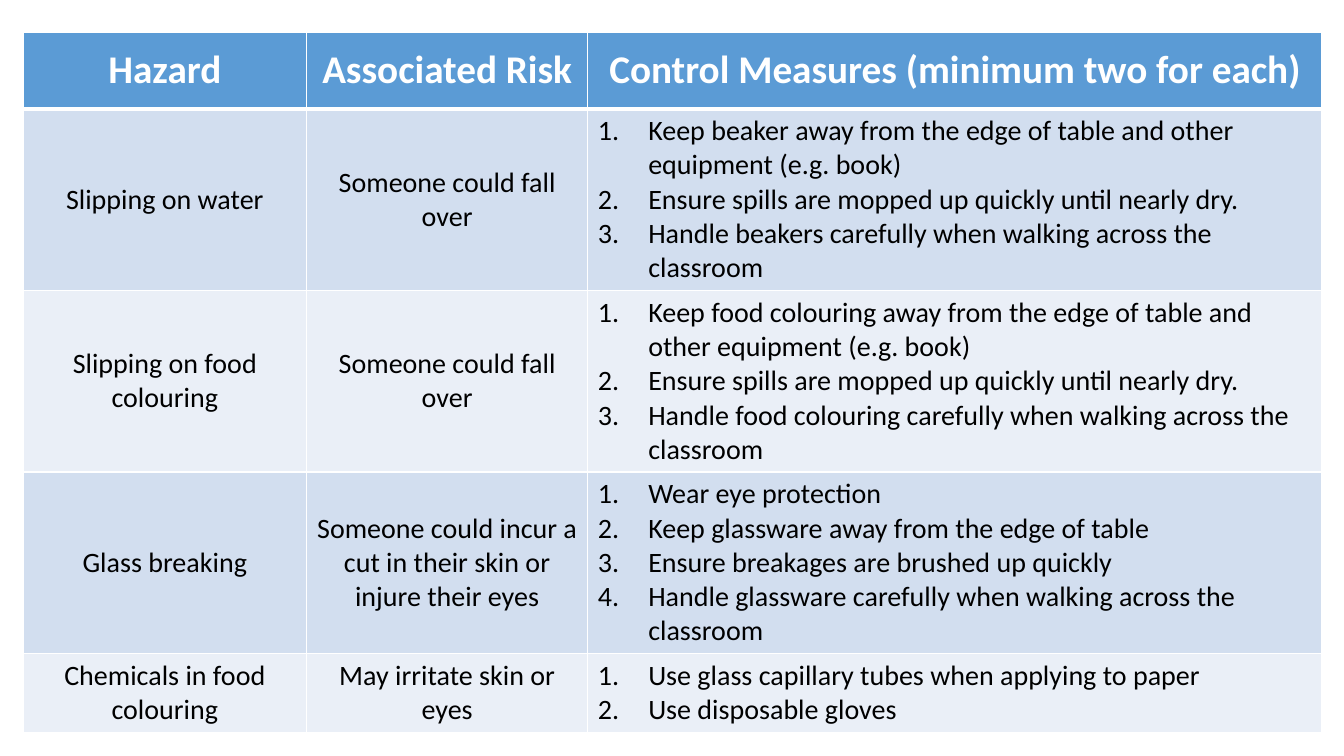
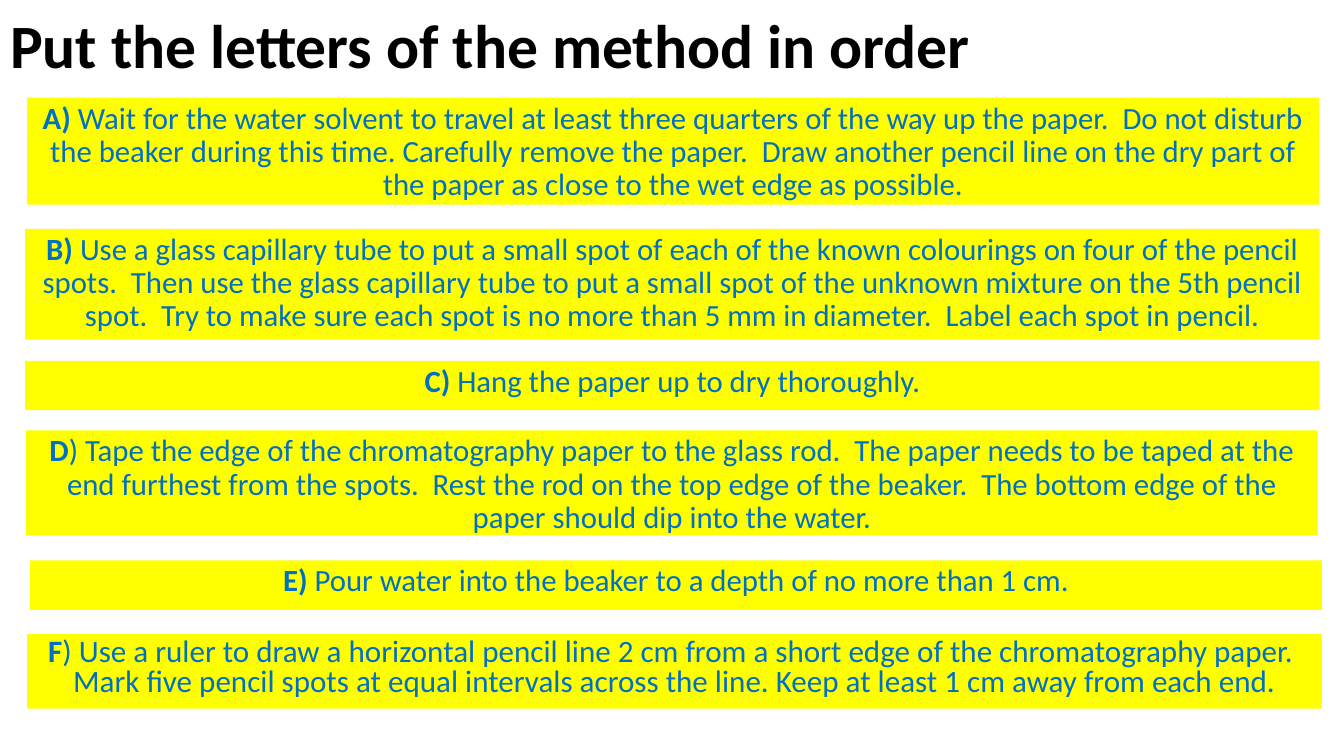
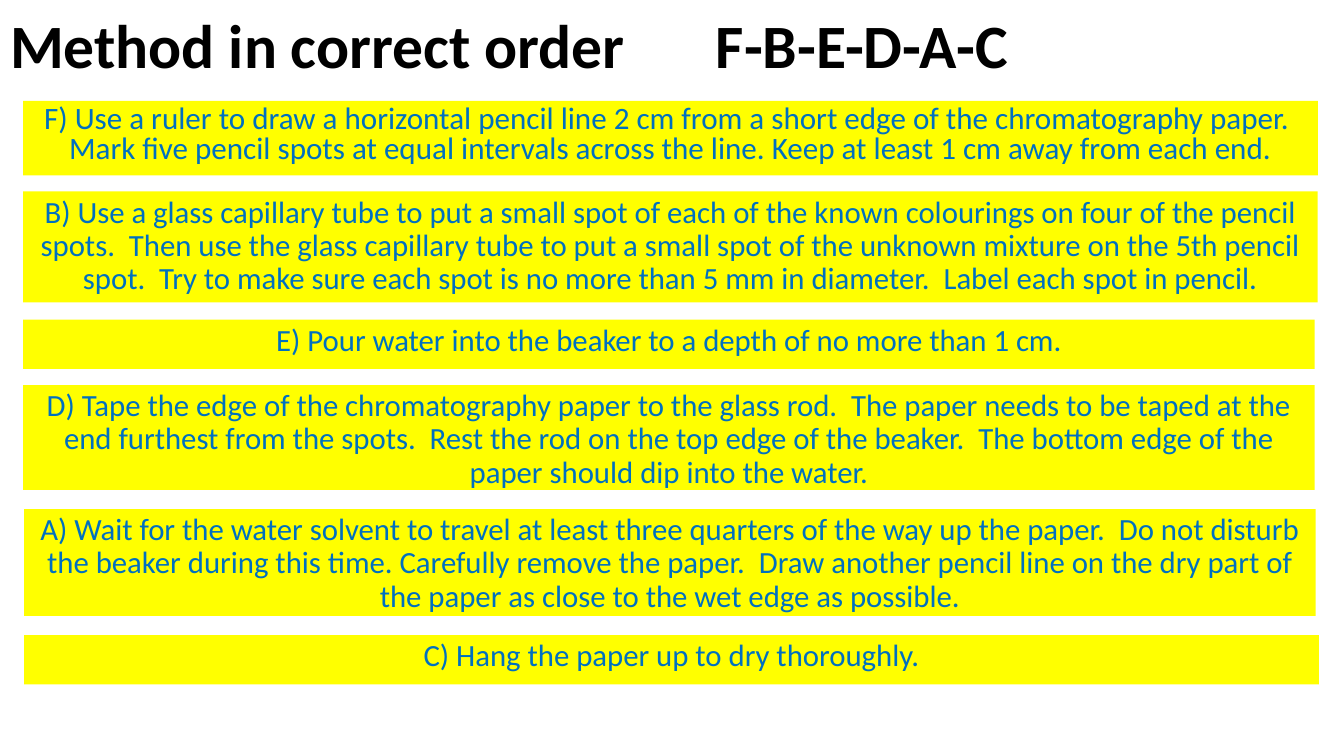
from lxml import etree
from pptx import Presentation
from pptx.dml.color import RGBColor
from pptx.enum.shapes import MSO_SHAPE
from pptx.enum.text import MSO_ANCHOR, MSO_AUTO_SIZE, PP_ALIGN
from pptx.oxml.ns import qn
from pptx.util import Inches, Pt

RECTANGLE = MSO_SHAPE.RECTANGLE
TOP, MIDDLE = MSO_ANCHOR.TOP, MSO_ANCHOR.MIDDLE
NO_AUTOFIT = MSO_AUTO_SIZE.NONE
LEFT, CENTER = PP_ALIGN.LEFT, PP_ALIGN.CENTER

FONT = "Calibri"
BLACK = RGBColor(0x00, 0x00, 0x00)
WHITE = RGBColor(0xFF, 0xFF, 0xFF)
HEADER_BLUE = RGBColor(0x5B, 0x9B, 0xD5)
ROW_FILLS = (RGBColor(0xD2, 0xDE, 0xEF), RGBColor(0xEA, 0xEF, 0xF7))
STEP_YELLOW = RGBColor(0xFF, 0xFF, 0x00)
STEP_BLUE = RGBColor(0x00, 0x70, 0xC0)

COLUMN_WIDTHS = (2.81, 2.79, 7.28)
ROW_HEIGHTS = (0.76, 1.8, 1.8, 1.8, 0.77)
HEADERS = ("Hazard", "Associated Risk", "Control Measures (minimum two for each)")
HAZARDS = (
    ("Slipping on water", "Someone could fall over", (
        "Keep beaker away from the edge of table and other equipment (e.g. book)",
        "Ensure spills are mopped up quickly until nearly dry.",
        "Handle beakers carefully when walking across the classroom")),
    ("Slipping on food colouring", "Someone could fall over", (
        "Keep food colouring away from the edge of table and other equipment (e.g. book)",
        "Ensure spills are mopped up quickly until nearly dry.",
        "Handle food colouring carefully when walking across the classroom")),
    ("Glass breaking", "Someone could incur a cut in their skin or injure their eyes", (
        "Wear eye protection",
        "Keep glassware away from the edge of table",
        "Ensure breakages are brushed up quickly",
        "Handle glassware carefully when walking across the classroom")),
    ("Chemicals in food colouring", "May irritate skin or eyes", (
        "Use glass capillary tubes when applying to paper",
        "Use disposable gloves")),
)

STEPS = {
    "F": (12.84, 0.74, "Use a ruler to draw a horizontal pencil line 2 cm from a short edge of the "
          "chromatography paper.  Mark five pencil spots at equal intervals across the line. "
          "Keep at least 1 cm away from each end."),
    "B": (12.84, 1.1, "Use a glass capillary tube to put a small spot of each of the known colourings "
          "on four of the pencil spots.  Then use the glass capillary tube to put a small spot of the "
          "unknown mixture on the 5th pencil spot.  Try to make sure each spot is no more than 5 mm "
          "in diameter.  Label each spot in pencil."),
    "E": (12.81, 0.49, "Pour water into the beaker to a depth of no more than 1 cm."),
    "D": (12.81, 1.04, "Tape the edge of the chromatography paper to the glass rod.  The paper needs "
          "to be taped at the end furthest from the spots.  Rest the rod on the top edge of the "
          "beaker.  The bottom edge of the paper should dip into the water."),
    "A": (12.81, 1.06, "Wait for the water solvent to travel at least three quarters of the way up "
          "the paper.  Do not disturb the beaker during this time. Carefully remove the paper.  Draw "
          "another pencil line on the dry part of the paper as close to the wet edge as possible."),
    "C": (12.84, 0.49, "Hang the paper up to dry thoroughly."),
}
PLACEHOLDER_STEP = "F"
LETTER_ONLY_BOLD = "DF"
SHUFFLED_PLACES = {"F": (0.27, 6.29), "B": (0.25, 2.27), "E": (0.3, 5.56),
                   "D": (0.26, 4.27), "A": (0.27, 0.97), "C": (0.25, 3.58)}
ORDERED_PLACES = {"F": (0.23, 1), "B": (0.23, 1.9), "E": (0.23, 3.17),
                  "D": (0.23, 3.82), "A": (0.24, 5.05), "C": (0.24, 6.3)}


def add_run(paragraph, text, size, color, bold=False):
    """Append one formatted run."""
    run = paragraph.add_run()
    run.text = text
    run.font.name = FONT
    run.font.size = Pt(size)
    run.font.bold = bold
    run.font.color.rgb = color


def place(shape, left, top, width, height):
    """Move and size a shape, in inches."""
    shape.left, shape.top = Inches(left), Inches(top)
    shape.width, shape.height = Inches(width), Inches(height)


def set_bullet(paragraph, tag, indent=0, **attributes):
    """Set the bullet element and hanging indent of a paragraph."""
    properties = paragraph._p.get_or_add_pPr()
    properties.set("marL", str(Inches(indent)))
    properties.set("indent", str(-Inches(indent)))
    etree.SubElement(properties, qn(tag), attributes)


def set_borders(cell, bottom_width):
    """Draw white borders round a table cell."""
    properties = cell._tc.get_or_add_tcPr()
    for tag, width in (("a:lnL", 1), ("a:lnR", 1), ("a:lnT", 1), ("a:lnB", bottom_width)):
        line = etree.SubElement(properties, qn(tag), w=str(Pt(width)))
        fill = etree.SubElement(line, qn("a:solidFill"))
        etree.SubElement(fill, qn("a:srgbClr"), val=str(WHITE))


def fill_cell(cell, content, fill, size=20, color=BLACK, bold=False, bottom_width=1):
    """Write a cell; a tuple of texts becomes a numbered list."""
    set_borders(cell, bottom_width)
    cell.fill.solid()
    cell.fill.fore_color.rgb = fill
    cell.vertical_anchor = MIDDLE
    numbered = isinstance(content, tuple)
    frame = cell.text_frame
    for index, text in enumerate(content if numbered else (content,)):
        paragraph = frame.add_paragraph() if index else frame.paragraphs[0]
        paragraph.alignment = LEFT if numbered else CENTER
        if numbered:
            set_bullet(paragraph, "a:buAutoNum", 0.5, type="arabicPeriod")
        add_run(paragraph, text, size, color, bold)


def add_hazard_slide(presentation):
    """Add the risk assessment table."""
    slide = presentation.slides.add_slide(presentation.slide_layouts.get_by_name("Blank"))
    frame = slide.shapes.add_table(len(ROW_HEIGHTS), len(COLUMN_WIDTHS), Inches(0.23), Inches(0.32),
                                   Inches(sum(COLUMN_WIDTHS)), Inches(sum(ROW_HEIGHTS)))
    table = frame.table
    for column, width in zip(table.columns, COLUMN_WIDTHS):
        column.width = Inches(width)
    for row, height in zip(table.rows, ROW_HEIGHTS):
        row.height = Inches(height)
    for column, header in enumerate(HEADERS):
        fill_cell(table.cell(0, column), header, HEADER_BLUE, 28, WHITE, True, 3)
    for row, hazard in enumerate(HAZARDS):
        for column, content in enumerate(hazard):
            fill_cell(table.cell(row + 1, column), content, ROW_FILLS[row % 2])


def add_title(slide, text):
    """Write the slide title in its placeholder."""
    title = slide.shapes.title
    place(title, 0, 0, 11.5, 0.97)
    frame = title.text_frame
    frame.auto_size = NO_AUTOFIT
    frame.vertical_anchor = MIDDLE
    paragraph = frame.paragraphs[0]
    paragraph.alignment = LEFT
    paragraph.line_spacing = 0.9
    add_run(paragraph, text, 44, BLACK, True)


def add_step(slide, letter, left, top, bold_label):
    """Add one yellow method step."""
    width, height, text = STEPS[letter]
    in_placeholder = letter == PLACEHOLDER_STEP
    if in_placeholder:
        shape = slide.placeholders[1]
    else:
        shape = slide.shapes.add_shape(RECTANGLE, 0, 0, 0, 0)
    place(shape, left, top, width, height)
    shape.shadow.inherit = False
    shape.fill.solid()
    shape.fill.fore_color.rgb = STEP_YELLOW
    shape.line.fill.background()
    frame = shape.text_frame
    frame.word_wrap = True
    frame.auto_size = NO_AUTOFIT
    frame.vertical_anchor = TOP
    paragraph = frame.paragraphs[0]
    paragraph.alignment = CENTER
    paragraph.line_spacing = 0.8 if in_placeholder else 0.9
    paragraph.space_before = Pt(10)
    set_bullet(paragraph, "a:buNone")
    size = 22.2 if in_placeholder else 22
    full_text = f"{letter}) {text}"
    if bold_label:
        split = 1 if letter in LETTER_ONLY_BOLD else 3
        add_run(paragraph, full_text[:split], size, STEP_BLUE, True)
        add_run(paragraph, full_text[split:], size, STEP_BLUE)
    else:
        add_run(paragraph, full_text, size, STEP_BLUE)


def add_method_slide(presentation, title, places, bold_labels):
    """Add a slide of method steps."""
    layout = presentation.slide_layouts.get_by_name("Title and Content")
    slide = presentation.slides.add_slide(layout)
    add_title(slide, title)
    for letter, (left, top) in places.items():
        add_step(slide, letter, left, top, bold_labels)


def main():
    """Build and save the presentation."""
    presentation = Presentation()
    presentation.slide_width, presentation.slide_height = Inches(13.33), Inches(7.5)
    add_hazard_slide(presentation)
    add_method_slide(presentation, "Put the letters of the method in order", SHUFFLED_PLACES, True)
    add_method_slide(presentation, "Method in correct order\t\tF-B-E-D-A-C", ORDERED_PLACES, False)
    presentation.save("out.pptx")


if __name__ == "__main__":
    main()
